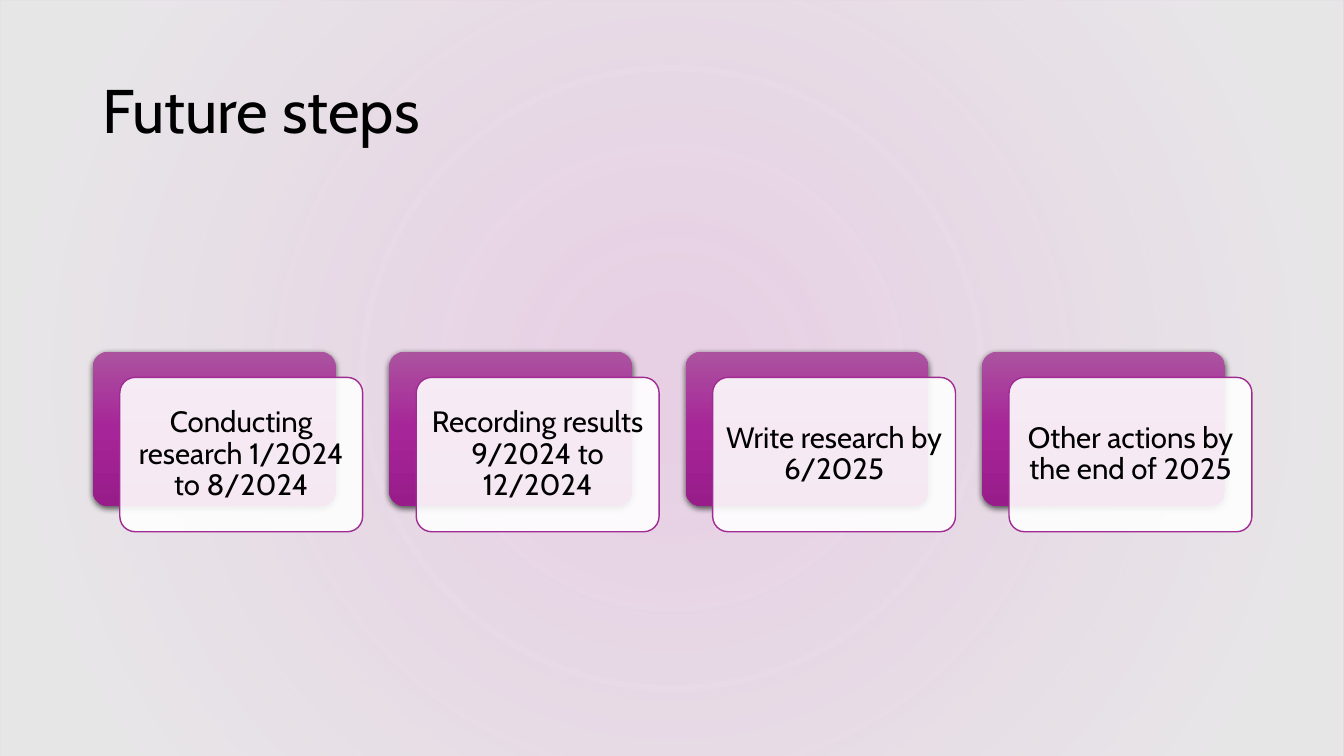
from dataclasses import dataclass

from pptx import Presentation
from pptx.dml.color import RGBColor as Rgb
from pptx.enum.shapes import MSO_SHAPE as Kind
from pptx.enum.text import MSO_ANCHOR as Anchor, PP_ALIGN as Align
from pptx.oxml import parse_xml
from pptx.oxml.ns import nsdecls, qn
from pptx.util import Cm, Pt


@dataclass(frozen=True)
class Theme:
    """Colours, font and type sizes of the deck."""
    font: str = "Cabin"
    ink: str = "000000"
    back: str = "E59EDD"
    veil: str = "E8E8E8"
    card: str = "FFFFFF"
    edge: str = "A02B93"
    shade: tuple = ("AC53A0", "A62598", "991C8B")
    head: int = 44
    body: int = 21


WIDE, HIGH = 33.87, 19.05
LEFT, TOP = 2.34, 8.86
STEP = 7.47
SIZE = 6.12, 3.89
SHIFT = 0.68, 0.65
STEPS = (
    "Conducting research 1/2024 to 8/2024",
    "Recording results 9/2024 to 12/2024",
    "Write research by 6/2025",
    "Other actions by the end of 2025",
)
LINEAR = '<a:lin ang="5400000" scaled="0"/>'
RADIAL = ('<a:path path="circle"><a:fillToRect l="50000" t="50000" '
          'r="50000" b="50000"/></a:path>')


class Board:
    """Draws styled elements on one slide."""

    def __init__(self, slide, theme):
        """Keep the slide and theme, and paint the background."""
        self.slide, self.theme = slide, theme
        fill = slide.background.fill
        fill.solid()
        fill.fore_color.rgb = Rgb.from_string(theme.back)

    def shape(self, kind, left, top, wide, high):
        """Add a plain shape without line or shadow."""
        shape = self.slide.shapes.add_shape(
            kind, Cm(left), Cm(top), Cm(wide), Cm(high))
        shape.shadow.inherit = False
        shape.line.fill.background()
        if kind == Kind.ROUNDED_RECTANGLE:
            shape.adjustments[0] = 0.1
        return shape

    def blend(self, shape, stops, flow):
        """Fill a shape with (place, colour, opacity) stops in percent."""
        marks = "".join(
            f'<a:gs pos="{at * 1000}"><a:srgbClr val="{tint}">'
            f'<a:alpha val="{alpha * 1000}"/></a:srgbClr></a:gs>'
            for at, tint, alpha in stops)
        props = shape._element.spPr
        props.find(qn("a:prstGeom")).addnext(parse_xml(
            f'<a:gradFill {nsdecls("a")} rotWithShape="1">'
            f'<a:gsLst>{marks}</a:gsLst>{flow}</a:gradFill>'))

    def veil(self):
        """Cover the slide with a soft radial veil."""
        tint = self.theme.veil
        shape = self.shape(Kind.RECTANGLE, 0, 0, WIDE, HIGH)
        self.blend(shape, [(10, tint, 68), (85, tint, 97)], RADIAL)

    def label(self, shape, text, size, align):
        """Set one paragraph of text in a shape."""
        frame = shape.text_frame
        frame.word_wrap = True
        frame.vertical_anchor = Anchor.MIDDLE
        para = frame.paragraphs[0]
        para.text = text
        para.alignment = align
        para.line_spacing = 0.9
        para.font.name = self.theme.font
        para.font.size = Pt(size)
        para.font.color.rgb = Rgb.from_string(self.theme.ink)
        return frame

    def title(self, text):
        """Add the slide title."""
        box = self.slide.shapes.add_textbox(
            Cm(LEFT), Cm(1.01), Cm(29.21), Cm(3.68))
        self.label(box, text, self.theme.head, Align.LEFT)

    def plate(self, left, top):
        """Add a shaded plate with a soft shadow."""
        shape = self.shape(Kind.ROUNDED_RECTANGLE, left, top, *SIZE)
        stops = [(50 * n, tint, 100)
                 for n, tint in enumerate(self.theme.shade)]
        self.blend(shape, stops, LINEAR)
        shape._element.spPr.find(qn("a:effectLst")).append(parse_xml(
            f'<a:outerShdw {nsdecls("a")} blurRad="{Pt(4.5)}" '
            f'dist="{Pt(1.5)}" dir="5400000" algn="ctr" rotWithShape="0">'
            f'<a:srgbClr val="{self.theme.ink}"><a:alpha val="63000"/>'
            '</a:srgbClr></a:outerShdw>'))

    def card(self, left, top, text):
        """Add a translucent card with centred text."""
        shape = self.shape(Kind.ROUNDED_RECTANGLE, left, top, *SIZE)
        shape.fill.solid()
        shape.fill.fore_color.rgb = Rgb.from_string(self.theme.card)
        tint = shape._element.spPr.find(qn("a:solidFill"))[0]
        tint.append(parse_xml(f'<a:alpha {nsdecls("a")} val="90000"/>'))
        shape.line.color.rgb = Rgb.from_string(self.theme.edge)
        shape.line.width = Pt(1)
        frame = self.label(shape, text, self.theme.body, Align.CENTER)
        frame.margin_left = frame.margin_right = Cm(0.22)
        frame.margin_top = frame.margin_bottom = Cm(0.22)


def main():
    """Build and save the slide."""
    deck = Presentation()
    deck.slide_width, deck.slide_height = Cm(WIDE), Cm(HIGH)
    board = Board(deck.slides.add_slide(deck.slide_layouts[6]), Theme())
    board.veil()
    board.title("Future steps")
    for n, text in enumerate(STEPS):
        left = LEFT + n * STEP
        board.plate(left, TOP)
        board.card(left + SHIFT[0], TOP + SHIFT[1], text)
    deck.save("out.pptx")


if __name__ == "__main__":
    main()
